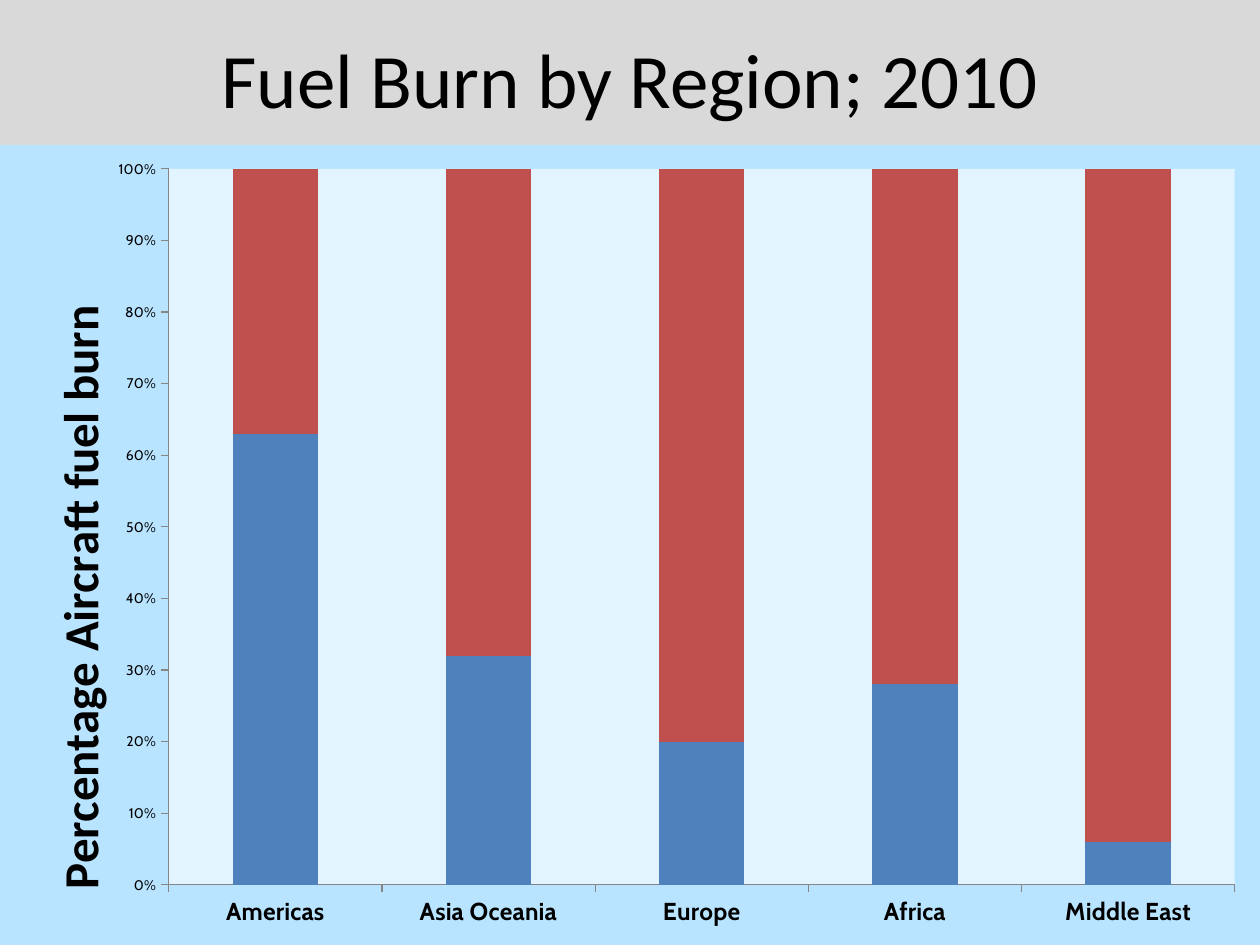
from pptx import Presentation
from pptx.chart.data import CategoryChartData
from pptx.dml.color import RGBColor
from pptx.enum.chart import XL_CHART_TYPE, XL_TICK_MARK
from pptx.enum.text import MSO_ANCHOR, PP_ALIGN
from pptx.oxml import parse_xml
from pptx.oxml.ns import nsdecls, qn
from pptx.util import Cm, Pt

COLORS = {
    "banner": "D9D9D9", "text": "000000", "chart": "B9E4FF", "plot": "E1F4FF",
    "axis": "868686", "Series 1": "4F81BD", "Series 2": "C0504D",
}
REGIONS = ["Americas", "Asia Oceania", "Europe", "Africa", "Middle East"]
SHARES = {"Series 1": [63, 32, 20, 28, 6], "Series 2": [37, 68, 80, 72, 94]}


def rgb(name):
    """Return the named palette colour."""
    return RGBColor.from_string(COLORS[name])


def format_font(font, **values):
    """Set font attributes and the text colour."""
    for name, value in values.items():
        setattr(font, name, value)
    font.color.rgb = rgb("text")


def area_fill(name):
    """Return chart shape properties with a solid fill and no line."""
    return parse_xml(
        f'<c:spPr {nsdecls("c", "a")}><a:solidFill><a:srgbClr val="{COLORS[name]}"/>'
        '</a:solidFill><a:ln><a:noFill/></a:ln></c:spPr>')


def set_layout(parent, index, **fractions):
    """Place a chart part by fractions of the chart area."""
    for old in parent.findall(qn("c:layout")):
        parent.remove(old)
    target = '<c:layoutTarget val="inner"/>' if "w" in fractions else ""
    modes = "".join(f'<c:{key}Mode val="edge"/>' for key in ("x", "y"))
    sizes = "".join(f'<c:{key} val="{value}"/>' for key, value in fractions.items())
    parent.insert(index, parse_xml(
        f'<c:layout {nsdecls("c")}><c:manualLayout>{target}{modes}{sizes}'
        '</c:manualLayout></c:layout>'))


def add_banner(s, left, top, width, height):
    """Format the title placeholder as a full-width banner."""
    title = s.shapes.title
    title.left, title.top, title.width, title.height = left, top, width, height
    title.fill.solid()
    title.fill.fore_color.rgb = rgb("banner")
    tf = title.text_frame
    tf.text = "Fuel Burn by Region; 2010"
    tf.vertical_anchor = MSO_ANCHOR.MIDDLE
    p = tf.paragraphs[0]
    p.alignment = PP_ALIGN.CENTER
    format_font(p.runs[0].font, name="Calibri", size=Pt(44))


def format_axes(chart):
    """Style both axes and the value axis title."""
    sizes = {chart.category_axis: (14, True), chart.value_axis: (8, False)}
    for axis, (size, bold) in sizes.items():
        axis.has_major_gridlines = False
        axis.major_tick_mark = XL_TICK_MARK.OUTSIDE
        axis.minor_tick_mark = XL_TICK_MARK.NONE
        axis.format.line.color.rgb = rgb("axis")
        axis.format.line.width = Pt(0.75)
        format_font(axis.tick_labels.font, name="Cabin", size=Pt(size), bold=bold)
    axis = chart.value_axis
    axis.minimum_scale, axis.maximum_scale, axis.major_unit = 0, 1, 0.1
    axis.tick_labels.number_format = "0%"
    axis.tick_labels.number_format_is_linked = False
    tf = axis.axis_title.text_frame
    tf.text = "Percentage Aircraft fuel burn"
    format_font(tf.paragraphs[0].runs[0].font, name="Calibri", size=Pt(28), bold=True)
    set_layout(tf._txBody.getparent().getparent(), 1, x=0.03, y=0.19)


def add_fuel_chart(s, left, top, width, height):
    """Add the stacked regional fuel burn chart."""
    data = CategoryChartData(number_format="General")
    data.categories = REGIONS
    for name, values in SHARES.items():
        data.add_series(name, values)
    chart = s.shapes.add_chart(
        XL_CHART_TYPE.COLUMN_STACKED_100, left, top, width, height, data).chart
    chart.has_legend = False
    chart.has_title = False
    format_font(chart.font, name="Cabin", size=Pt(8))
    plot = chart.plots[0]
    plot.gap_width, plot.overlap, plot.vary_by_categories = 150, 100, False
    for series in plot.series:
        series.format.fill.solid()
        series.format.fill.fore_color.rgb = rgb(series.name)
    format_axes(chart)
    chart_part = chart._chartSpace.find(qn("c:chart"))
    chart_part.addnext(area_fill("chart"))
    plot_area = chart_part.find(qn("c:plotArea"))
    plot_area.append(area_fill("plot"))
    set_layout(plot_area, 0, x=0.134, y=0.03, w=0.846, h=0.895)


def main():
    """Build and save the slide."""
    prs = Presentation()
    prs.slide_width, prs.slide_height = Cm(25.4), Cm(19.05)
    s = prs.slides.add_slide(prs.slide_layouts[5])
    add_banner(s, Cm(0), Cm(0), prs.slide_width, Cm(3.12))
    chart_top = Cm(2.92)
    add_fuel_chart(s, Cm(0), chart_top, prs.slide_width, prs.slide_height - chart_top)
    prs.save("out.pptx")


if __name__ == "__main__":
    main()
